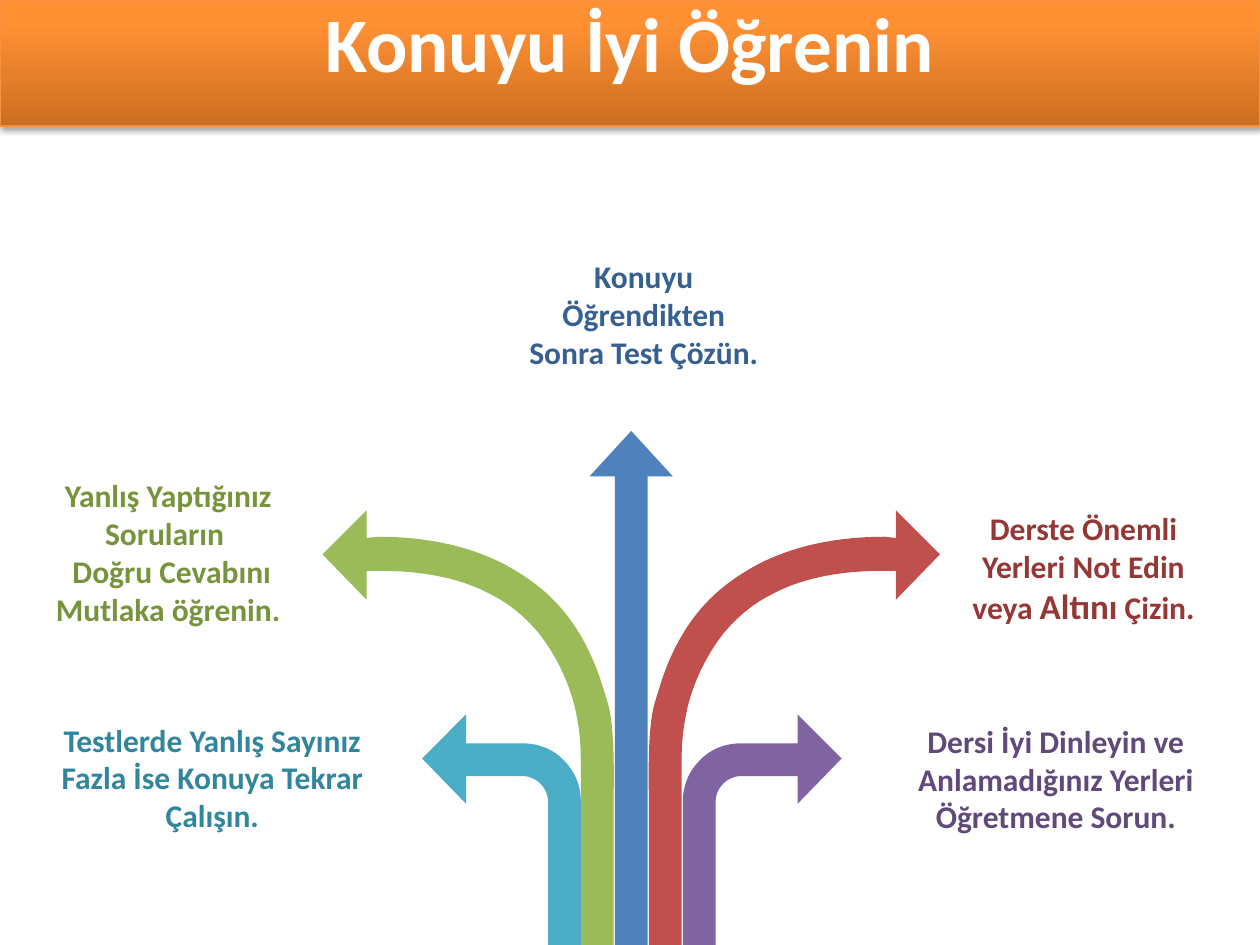
from copy import deepcopy
from typing import NamedTuple, Optional

from lxml.etree import SubElement
from pptx import Presentation
from pptx.dml.color import RGBColor
from pptx.enum.text import MSO_ANCHOR, MSO_AUTO_SIZE, PP_ALIGN
from pptx.oxml.ns import qn
from pptx.util import Inches, Pt

FONT = "Calibri"


class Arrow(NamedTuple):
    color: str
    outline: list  # (x, y) is a line end; six numbers are a Bézier curve
    mirror_sum: Optional[float] = None  # left x plus right x, when mirrored


class Label(NamedTuple):
    box: tuple
    color: str
    paragraphs: list  # each a list of (text, size)


UP_ARROW = [(5.34, 3.78), (5.01, 3.42), (4.68, 3.78), (4.88, 3.78),
            (4.88, 7.7), (5.14, 7.7), (5.14, 3.78)]
LONG_ARROW = [
    (2.91, 4.05), (2.56, 4.4), (2.91, 4.76), (2.91, 4.53), (3, 4.53),
    (3.39, 4.53, 3.68, 4.6, 3.9, 4.72),
    (4.06, 4.8, 4.18, 4.91, 4.28, 5.03),
    (4.42, 5.21, 4.51, 5.41, 4.56, 5.6),
    (4.6, 5.78, 4.61, 5.89, 4.61, 6.04),
    (4.61, 7.57), (4.87, 7.57), (4.87, 6.34),
    (4.88, 5.84, 4.85, 5.69, 4.83, 5.6),
    (4.79, 5.47, 4.75, 5.32, 4.67, 5.16),
    (4.56, 4.93, 4.39, 4.71, 4.11, 4.54),
    (3.84, 4.37, 3.47, 4.26, 3, 4.26),
    (2.91, 4.27)]
SHORT_ARROW = [
    (3.35, 6.02), (3.7, 6.38), (3.7, 6.16), (4.15, 6.16),
    (4.21, 6.16, 4.26, 6.19, 4.29, 6.22),
    (4.33, 6.26, 4.35, 6.31, 4.35, 6.36),
    (4.35, 7.57), (4.61, 7.57), (4.61, 6.36),
    (4.61, 6.23, 4.56, 6.12, 4.48, 6.04),
    (4.4, 5.95, 4.28, 5.9, 4.15, 5.9),
    (3.7, 5.9), (3.7, 5.67)]

ARROWS = [
    Arrow("4F81BD", UP_ARROW),
    Arrow("9BBB59", LONG_ARROW),
    Arrow("C0504D", LONG_ARROW, mirror_sum=10.02),
    Arrow("4BACC6", SHORT_ARROW),
    Arrow("8064A2", SHORT_ARROW, mirror_sum=10.03),
]
LABELS = [
    Label((7.45, 3.99, 2.3, 1.04), "953735",
          [[("Derste Önemli Yerleri Not Edin veya ", 18), ("Altını", 20), (" Çizin.", 18)]]),
    Label((6.99, 5.68, 2.78, 1.01), "604A7B",
          [[("Dersi İyi Dinleyin ve Anlamadığınız Yerleri Öğretmene Sorun.", 18)]]),
    Label((0, 3.73, 2.67, 1.31), "77933C",
          [[("Yanlış Yaptığınız Soruların ", 18)],
           [(" Doğru Cevabını Mutlaka öğrenin.", 18)]]),
    Label((0.29, 5.67, 2.79, 1.01), "31859C",
          [[("Testlerde Yanlış Sayınız Fazla İse Konuya Tekrar Çalışın.", 18)]]),
    Label((4.06, 1.99, 2.1, 1.01), "376092",
          [[("Konuyu Öğrendikten Sonra Test Çözün.", 18)]]),
]


def rgb(value: str) -> RGBColor:
    return RGBColor.from_string(value)


def add_run(p, text: str, size: float, color: str) -> None:
    r = p.add_run()
    r.text = text
    for name, value in {"name": FONT, "size": Pt(size), "bold": True}.items():
        setattr(r.font, name, value)
    r.font.color.rgb = rgb(color)


def segment_points(arrow: Arrow) -> list:
    """Return each segment's (x, y) points as lengths, mirrored where asked."""
    def place(x: float, y: float) -> tuple:
        return Inches(arrow.mirror_sum - x if arrow.mirror_sum else x), Inches(y)

    return [[place(x, y) for x, y in zip(segment[::2], segment[1::2])]
            for segment in arrow.outline]


def bend_segments(sp, segments: list) -> None:
    """Turn the straight segments that have control points into Bézier curves."""
    lines = sp.element.findall(".//" + qn("a:lnTo"))
    for line, points in zip(lines, segments[1:]):
        if len(points) == 1:
            continue
        line.tag = qn("a:cubicBezTo")
        line.remove(line[0])
        for x, y in points:
            SubElement(line, qn("a:pt"), x=str(x - sp.left), y=str(y - sp.top))


def draw_arrow(s, arrow: Arrow) -> None:
    segments = segment_points(arrow)
    ends = [points[-1] for points in segments]
    builder = s.shapes.build_freeform(*ends[0])
    builder.add_line_segments(ends[1:], close=True)
    sp = builder.convert_to_shape()
    bend_segments(sp, segments)
    sp.shadow.inherit = False
    sp.fill.solid()
    sp.fill.fore_color.rgb = rgb(arrow.color)
    sp.line.fill.background()


def draw_label(s, label: Label) -> None:
    tf = s.shapes.add_textbox(*map(Inches, label.box)).text_frame
    tf.word_wrap = True
    tf.auto_size = MSO_AUTO_SIZE.SHAPE_TO_FIT_TEXT
    for i, runs in enumerate(label.paragraphs):
        p = tf.add_paragraph() if i else tf.paragraphs[0]
        p.alignment = PP_ALIGN.CENTER
        for text, size in runs:
            add_run(p, text, size, label.color)


def add_banner_shadow(sp) -> None:
    effects = SubElement(sp.element.spPr, qn("a:effectLst"))
    shadow = SubElement(effects, qn("a:outerShdw"), blurRad=str(Pt(3.1)),
                        dist=str(Pt(1.8)), dir="5400000", rotWithShape="0")
    black = SubElement(shadow, qn("a:srgbClr"), val="000000")
    SubElement(black, qn("a:alpha"), val="35000")


def draw_title(s, text: str) -> None:
    sp = s.shapes.title
    box = {"left": 0, "top": 0, "width": 10, "height": 1}
    for name, value in box.items():
        setattr(sp, name, Inches(value))

    sp.fill.gradient()
    sp.fill.gradient_angle = 90
    stop_list = sp.element.spPr.find(".//" + qn("a:gsLst"))
    stop_list.append(deepcopy(stop_list[-1]))
    stops = [(0, "CC6E20"), (0.8, "FF9034"), (1, "FF9136")]
    for stop, (position, color) in zip(sp.fill.gradient_stops, stops):
        stop.position = position
        stop.color.rgb = rgb(color)
    sp.line.color.rgb = rgb("F69240")
    sp.line.width = Pt(0.75)
    add_banner_shadow(sp)

    tf = sp.text_frame
    settings = {"word_wrap": True, "auto_size": MSO_AUTO_SIZE.NONE,
                "vertical_anchor": MSO_ANCHOR.TOP}
    for name, value in settings.items():
        setattr(tf, name, value)
    p = tf.paragraphs[0]
    p.alignment = PP_ALIGN.CENTER
    p.line_spacing = 0.9
    add_run(p, text, 44, "FFFFFF")


def main() -> None:
    prs = Presentation()
    prs.slide_width, prs.slide_height = Inches(10), Inches(7.5)
    s = prs.slides.add_slide(prs.slide_layouts[5])
    draw_title(s, "Konuyu İyi Öğrenin")
    for arrow in ARROWS:
        draw_arrow(s, arrow)
    for label in LABELS:
        draw_label(s, label)
    prs.save("out.pptx")


if __name__ == "__main__":
    main()
